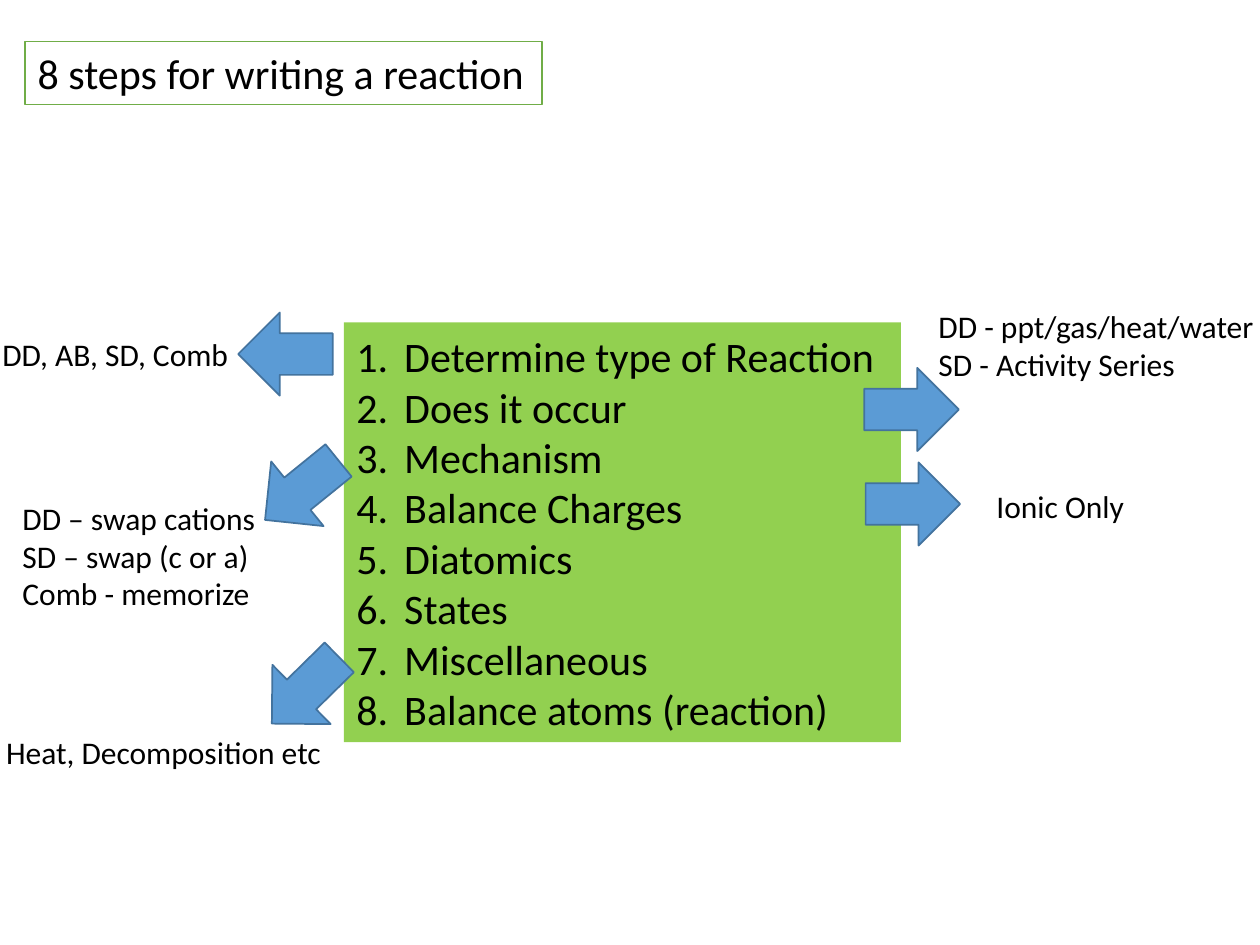
from lxml.etree import SubElement
from pptx import Presentation
from pptx.dml.color import RGBColor
from pptx.enum.shapes import MSO_SHAPE as Shape
from pptx.enum.text import MSO_AUTO_SIZE as Fit, PP_ALIGN as Align
from pptx.oxml.ns import qn
from pptx.util import Inches, Pt

BLACK = RGBColor(0x00, 0x00, 0x00)
WHITE = RGBColor(0xFF, 0xFF, 0xFF)
LIME = RGBColor(0x92, 0xD0, 0x50)
GREEN = RGBColor(0x70, 0xAD, 0x47)
BLUE = RGBColor(0x5B, 0x9B, 0xD5)
NAVY = RGBColor(0x43, 0x73, 0x9E)

STEPS = [
    "Determine type of Reaction", "Does it occur", "Mechanism",
    "Balance Charges", "Diatomics", "States", "Miscellaneous",
    "Balance atoms (reaction)",
]
NOTES = [
    (-0.08, 2.61, 2.02, 0.4, ["DD, AB, SD, Comb"]),
    (7.35, 2.39, 2.73, 0.71, ["DD - ppt/gas/heat/water", "SD - Activity Series"]),
    (0.08, 3.91, 2.07, 1.01,
     ["DD – swap cations", "SD – swap (c or a)", "Comb - memorize"]),
    (7.81, 3.82, 1.23, 0.4, ["Ionic Only"]),
    (-0.05, 5.77, 2.73, 0.4, ["Heat, Decomposition etc"]),
]
ARROWS = [
    (6.86, 2.92, 0), (1.89, 2.48, 180), (2.02, 3.56, 141),
    (6.87, 3.67, 0), (2.05, 5.15, 135.5),
]


class Deck:
    font = "Calibri"
    big, small = Pt(24), Pt(18)
    hang = Inches(0.38)

    def __init__(self, slide):
        self.shapes = slide.shapes

    def shape(self, kind, x, y, w, h, fill, line=None):
        item = self.shapes.add_shape(kind, *map(Inches, (x, y, w, h)))
        item.shadow.inherit = False
        item.fill.solid()
        item.fill.fore_color.rgb = fill
        if line is None:
            item.line.fill.background()
        else:
            item.line.color.rgb = line
            item.line.width = Pt(1)
        return item

    def text(self, item, lines, size, count=False):
        """Put each line in its own paragraph, numbered if count is set."""
        frame = item.text_frame
        frame.word_wrap = False
        frame.auto_size = Fit.SHAPE_TO_FIT_TEXT
        for i, line in enumerate(lines):
            para = frame.add_paragraph() if i else frame.paragraphs[0]
            para.alignment = Align.LEFT
            if count:
                self.number(para)
            run = para.add_run()
            run.text = line
            run.font.name = self.font
            run.font.size = size
            run.font.color.rgb = BLACK

    def number(self, para):
        props = para._p.get_or_add_pPr()
        props.set("marL", str(self.hang))
        props.set("indent", str(-self.hang))
        SubElement(props, qn("a:buFont"), typeface="+mj-lt")
        SubElement(props, qn("a:buAutoNum"), type="arabicPeriod")

    def box(self, x, y, w, h, lines, fill, line=None, count=False):
        item = self.shape(Shape.RECTANGLE, x, y, w, h, fill, line)
        self.text(item, lines, self.big, count)

    def note(self, x, y, w, h, lines):
        item = self.shapes.add_textbox(*map(Inches, (x, y, w, h)))
        self.text(item, lines, self.small)

    def arrow(self, x, y, turn):
        item = self.shape(Shape.RIGHT_ARROW, x, y, 0.75, 0.66, BLUE, NAVY)
        item.rotation = turn


def main():
    show = Presentation()
    show.slide_width, show.slide_height = Inches(10), Inches(7.5)
    deck = Deck(show.slides.add_slide(show.slide_layouts[6]))
    deck.box(0.2, 0.33, 4.1, 0.5, ["8 steps for writing a reaction"], WHITE, GREEN)
    deck.box(2.73, 2.56, 4.42, 3.33, STEPS, LIME, count=True)
    for note in NOTES:
        deck.note(*note)
    for arrow in ARROWS:
        deck.arrow(*arrow)
    show.save("out.pptx")


if __name__ == "__main__":
    main()
